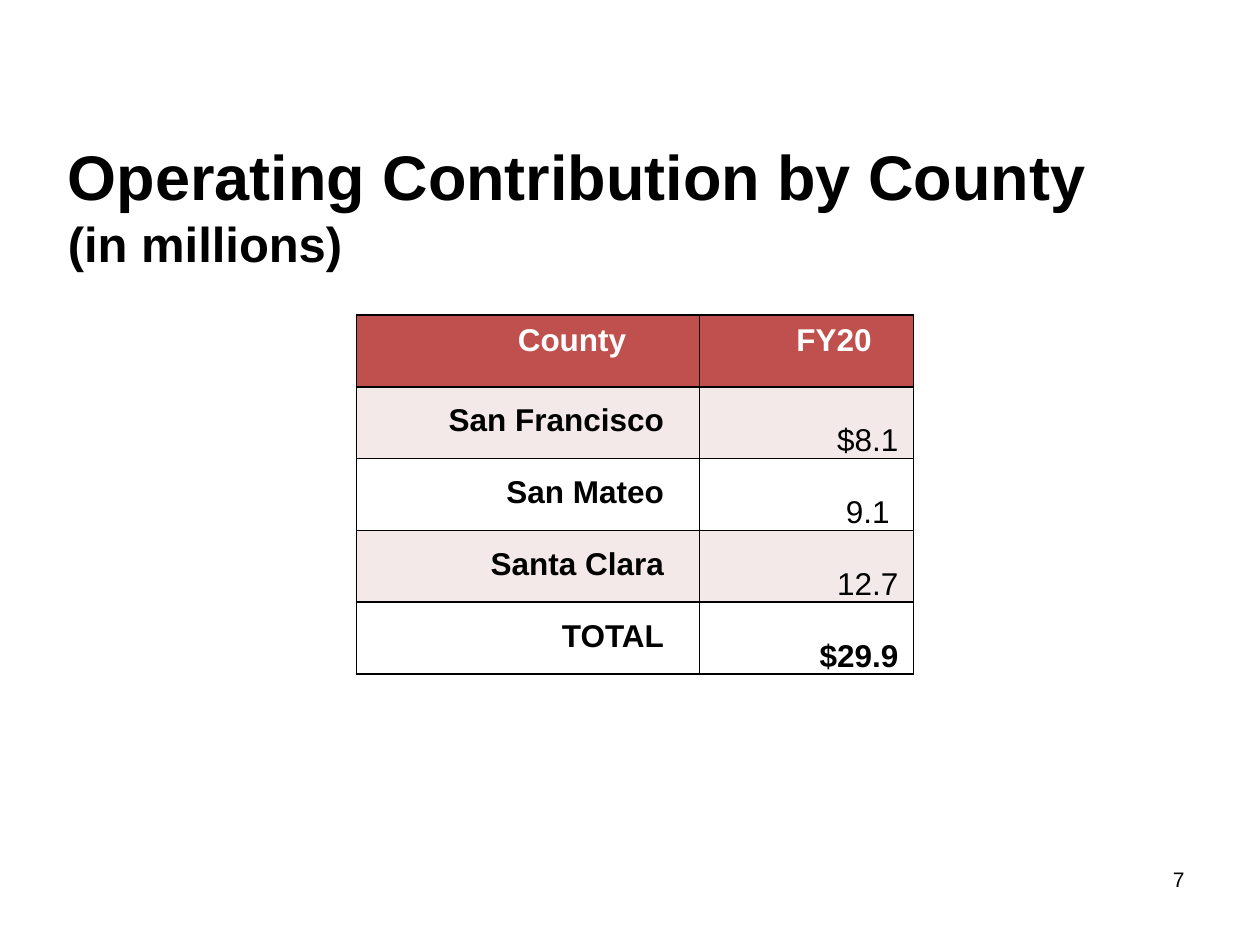
import pptx
import pptx.util
import pptx.dml.color
import pptx.enum.text
import pptx.oxml
import pptx.oxml.ns

Inches = pptx.util.Inches
Pt = pptx.util.Pt
RGBColor = pptx.dml.color.RGBColor
Align = pptx.enum.text.PP_ALIGN
Anchor = pptx.enum.text.MSO_ANCHOR

BLACK = RGBColor(0x00, 0x00, 0x00)
WHITE = RGBColor(0xFF, 0xFF, 0xFF)
RED = RGBColor(0xC0, 0x50, 0x4D)
PINK = RGBColor(0xF4, 0xE9, 0xE9)


def style(font, size, color=BLACK, bold=False):
    font.name = "Arial"
    font.size = Pt(size)
    font.color.rgb = color
    font.bold = bold


def border(cell):
    """Draw a 1 pt black line on all four sides; call before filling."""
    props = cell._tc.get_or_add_tcPr()
    for side in ("lnL", "lnR", "lnT", "lnB"):
        props.append(pptx.oxml.parse_xml(
            f'<a:{side} {pptx.oxml.ns.nsdecls("a")} w="12700"><a:solidFill>'
            f'<a:srgbClr val="{BLACK}"/></a:solidFill></a:{side}>'))


deck = pptx.Presentation()
deck.slide_width = Inches(10)
deck.slide_height = Inches(7.5)
slide = deck.slides.add_slide(deck.slide_layouts[6])

# Title
title = slide.shapes.add_textbox(
    Inches(0.44), Inches(1.25), Inches(9.58), Inches(0.75)).text_frame
title.word_wrap = True
title.vertical_anchor = Anchor.MIDDLE
para = title.paragraphs[0]
head = para.add_run()
head.text = "Operating Contribution by County"
style(head.font, 36, bold=True)
para.add_line_break()
unit = para.add_run()
unit.text = "(in millions)"
style(unit.font, 28, bold=True)

# Page number
page = slide.shapes.add_textbox(
    Inches(7.17), Inches(6.83), Inches(2.33), Inches(0.52)).text_frame
page.word_wrap = True
para = page.paragraphs[0]
para.text = "7"
para.alignment = Align.RIGHT
style(para.font, 12)

# County table
rows = [
    ("County", "FY20"),
    ("San Francisco", "$8.1"),
    ("San Mateo", "9.1"),
    ("Santa Clara", "12.7"),
    ("TOTAL", "$29.9"),
]
table = slide.shapes.add_table(
    len(rows), 2, Inches(2.83), Inches(2.5), Inches(4.42), Inches(2.83)).table
table.columns[0].width = Inches(2.72)
table.columns[1].width = Inches(1.7)

for r, row in enumerate(rows):
    table.rows[r].height = Inches(0.57)
    for c, text in enumerate(row):
        cell = table.cell(r, c)
        border(cell)
        cell.margin_left = cell.margin_right = 0
        cell.margin_top = cell.margin_bottom = 0
        para = cell.text_frame.paragraphs[0]
        para.text = text
        para.alignment = Align.RIGHT
        bold = c == 0 or r in (0, len(rows) - 1)
        style(para.font, 18, WHITE if r == 0 else BLACK, bold)

        if r == 0:
            para.alignment = Align.CENTER
            cell.margin_left = Inches((0.7, 0.44)[c])
            cell.margin_top = Inches(0.06)
        elif c == 0:
            cell.margin_top = Inches(0.13)
            cell.margin_right = Inches(0.28)
        else:
            cell.vertical_anchor = Anchor.BOTTOM
            cell.margin_right = Inches(0.19 if text == "9.1" else 0.12)

        if r == 0 or r % 2:
            cell.fill.solid()
            cell.fill.fore_color.rgb = PINK if r else RED
        else:
            cell.fill.background()

deck.save("out.pptx")
